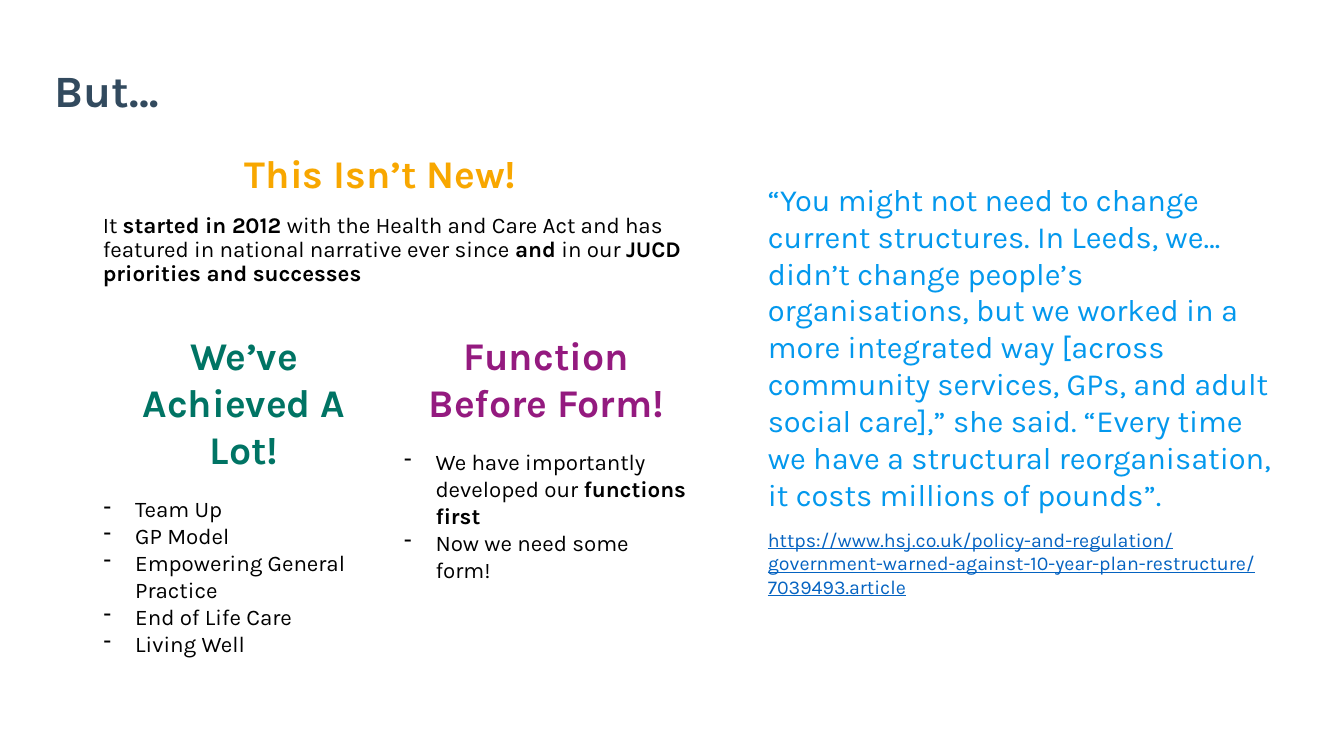
from lxml import etree
from pptx import Presentation
from pptx.dml.color import RGBColor
from pptx.enum.shapes import MSO_SHAPE
from pptx.enum.text import MSO_ANCHOR, PP_ALIGN
from pptx.oxml.ns import qn
from pptx.util import Pt

RECTANGLE = MSO_SHAPE.RECTANGLE
TOP = MSO_ANCHOR.TOP
LEFT, CENTER = PP_ALIGN.LEFT, PP_ALIGN.CENTER

WHITE = RGBColor(0xFF, 0xFF, 0xFF)
BLACK = RGBColor(0x00, 0x00, 0x00)
NAVY = RGBColor(0x32, 0x4A, 0x5E)
AMBER = RGBColor(0xF8, 0xA7, 0x00)
GREEN = RGBColor(0x00, 0x74, 0x64)
PURPLE = RGBColor(0x94, 0x1A, 0x7F)
SKY = RGBColor(0x03, 0x98, 0xED)
LINK_BLUE = RGBColor(0x05, 0x63, 0xC1)

FONT = "Karla"
BULLET_INDENT = Pt(22.5)


def set_up_frame(box, inset_x, inset_top):
    frame = box.text_frame
    frame.word_wrap = True
    frame.vertical_anchor = TOP
    frame.margin_left = frame.margin_right = Pt(inset_x)
    frame.margin_top = Pt(inset_top)
    frame.margin_bottom = Pt(0)


def add_text_box(page, area, inset_x=0, inset_top=0):
    box = page.shapes.add_textbox(*map(Pt, area))
    set_up_frame(box, inset_x, inset_top)
    return box


def add_panel(page, area, inset_x=0, inset_top=0):
    box = page.shapes.add_shape(RECTANGLE, *map(Pt, area))
    box.shadow.inherit = False
    box.fill.solid()
    box.fill.fore_color.rgb = WHITE
    box.line.fill.background()
    set_up_frame(box, inset_x, inset_top)
    return box


def add_text(box, text, size=16, color=BLACK, bold=False, underline=False,
             align=LEFT, spacing=1.0, before=0, after=0, indent=0, bullet=False):
    """Parts between asterisks are bold."""
    frame = box.text_frame
    para = frame.paragraphs[0]
    if para.runs:
        para = frame.add_paragraph()
    properties = para._p.get_or_add_pPr()
    if bullet:
        properties.set("marL", str(BULLET_INDENT))
        properties.set("indent", str(-BULLET_INDENT))
        etree.SubElement(properties, qn("a:buChar")).set("char", "-")
    elif indent:
        properties.set("marL", str(Pt(indent)))
    para.alignment = align
    para.line_spacing = spacing
    para.space_before = Pt(before)
    para.space_after = Pt(after)
    for index, part in enumerate(text.split("*")):
        if part:
            span = para.add_run()
            span.text = part
            span.font.name = FONT
            span.font.size = Pt(size)
            span.font.color.rgb = color
            span.font.bold = bold or index % 2 == 1
            span.font.underline = underline


def add_title(page, area):
    box = add_text_box(page, area)
    add_text(box, "But…", size=32, color=NAVY, bold=True, spacing=0.9)


def add_history(page, area):
    box = add_panel(page, area, inset_top=20.6)
    add_text(box, "This Isn’t New!", size=28, color=AMBER, bold=True,
             align=CENTER, spacing=0.9, after=6)
    add_text(box, "It *started in 2012 *with the Health and Care Act and has featured "
             "in national narrative ever since *and *in our *JUCD priorities and successes*",
             spacing=0.9, before=6, after=6, indent=28)


def add_column(page, area, headings, color, items):
    box = add_panel(page, area, inset_x=7.2, inset_top=22.7)
    for heading in headings:
        add_text(box, heading, size=28, color=color, bold=True, align=CENTER,
                 after=16.5 if heading == headings[-1] else 0)
    for item in items:
        add_text(box, item, bullet=True)


def add_quote(page, area):
    box = add_text_box(page, area, inset_x=7.2, inset_top=3.6)
    add_text(box, "“You might not need to change current structures. In Leeds, we… "
             "didn’t change people’s organisations, but we worked in a more integrated way "
             "[across community services, GPs, and adult social care],” she said. “Every time "
             "we have a structural reorganisation, it costs millions of pounds”.",
             size=22, color=SKY, after=10.5)
    add_text(box, "https://www.hsj.co.uk/policy-and-regulation/"
             "government-warned-against-10-year-plan-restructure/7039493.article",
             size=14, color=LINK_BLUE, underline=True)


def main():
    deck = Presentation()
    deck.slide_width, deck.slide_height = Pt(960), Pt(540)
    page = deck.slides.add_slide(deck.slide_layouts[6])
    add_column(page, (67, 213.8, 214.5, 237.6), ["We’ve Achieved A Lot!"], GREEN,
               ["Team Up", "GP Model", "Empowering General Practice",
                "End of Life Care", "Living Well"])
    add_title(page, (39.2, 49, 882.7, 51.1))
    add_history(page, (45.4, 90, 452.9, 121.7))
    add_column(page, (281.5, 213.8, 217.5, 237.6), ["Function", "Before Form!"], PURPLE,
               ["We have importantly developed our *functions first*",
                "Now we need some form!"])
    add_quote(page, (541.4, 125.3, 373.7, 292.3))
    deck.save("out.pptx")


if __name__ == "__main__":
    main()
